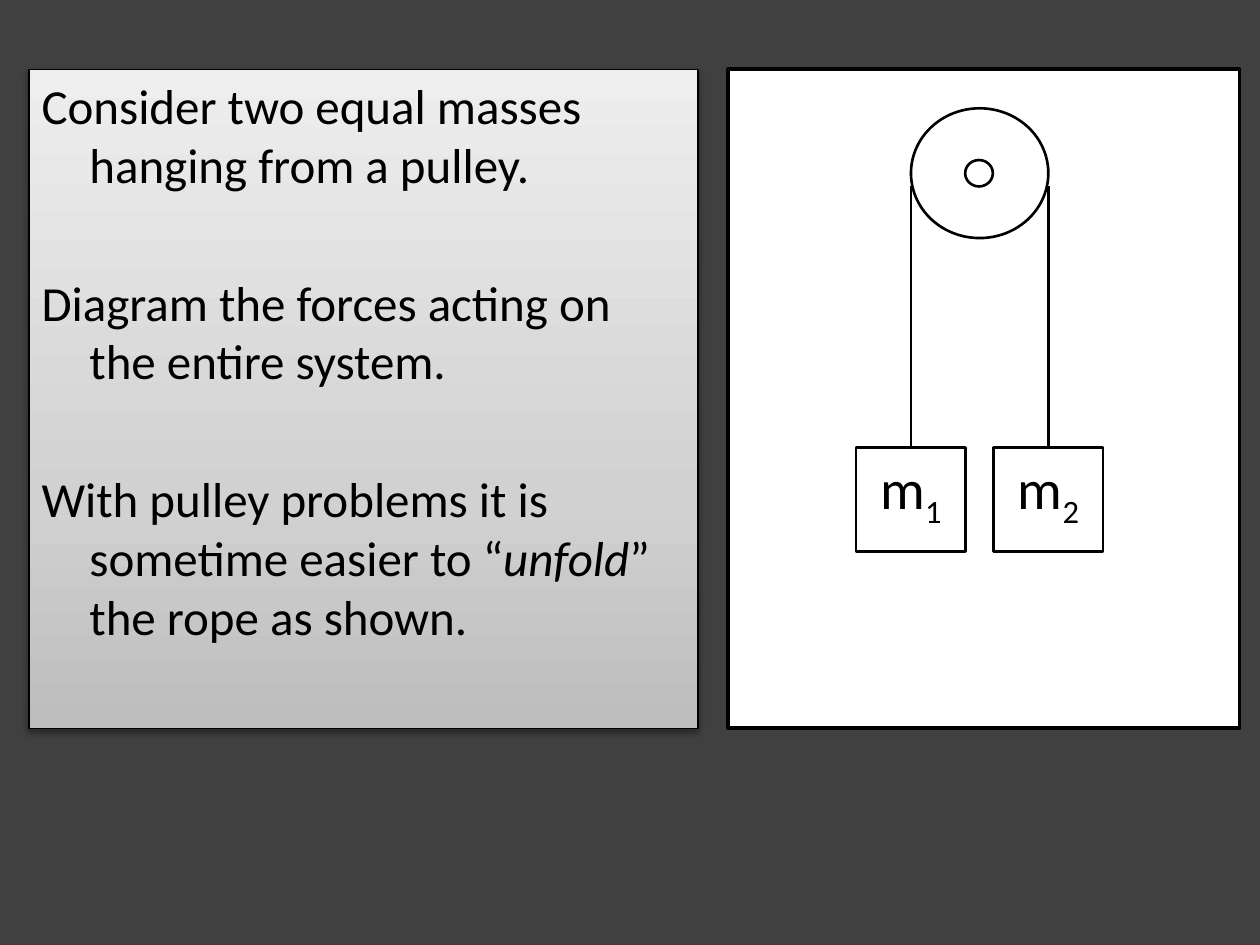
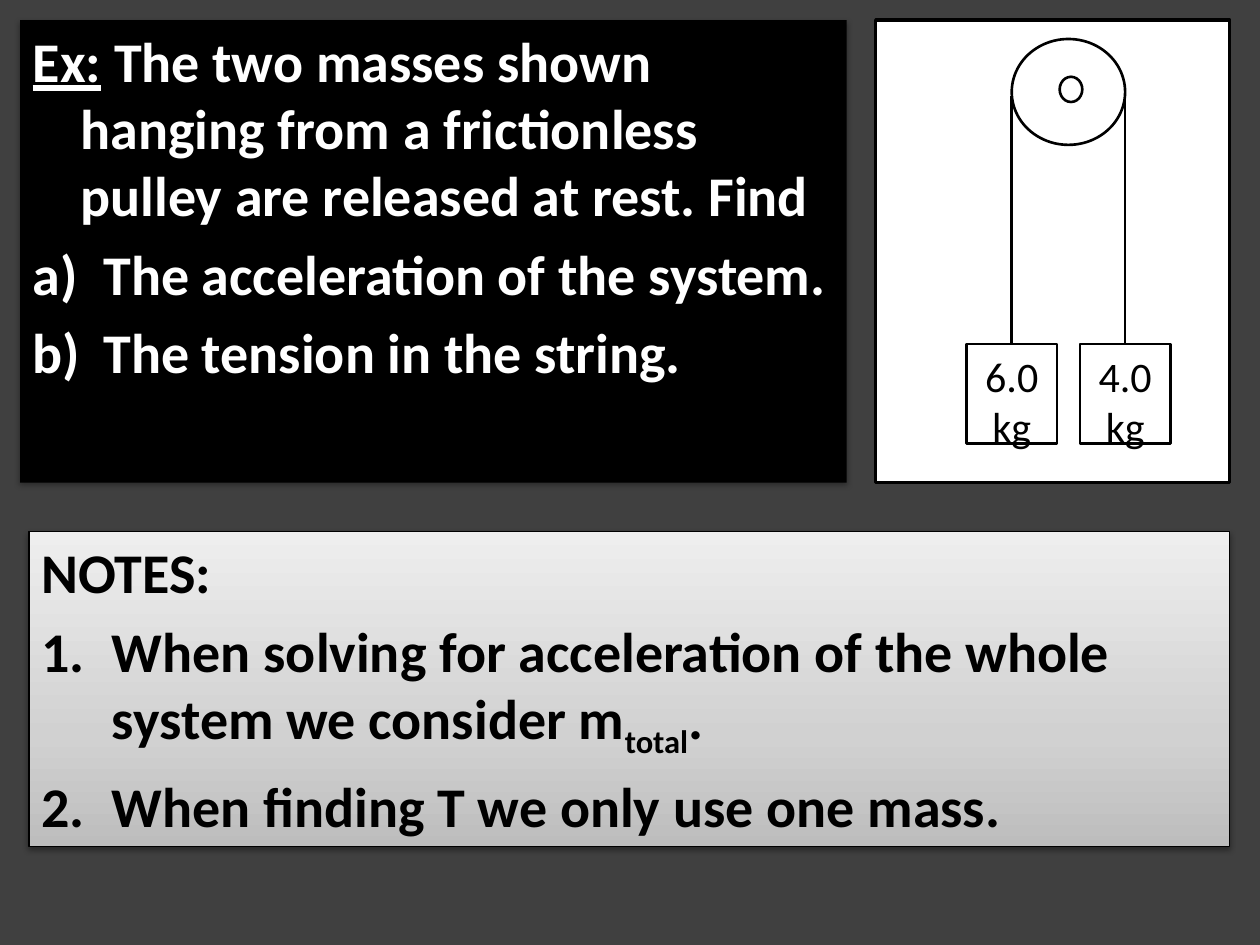
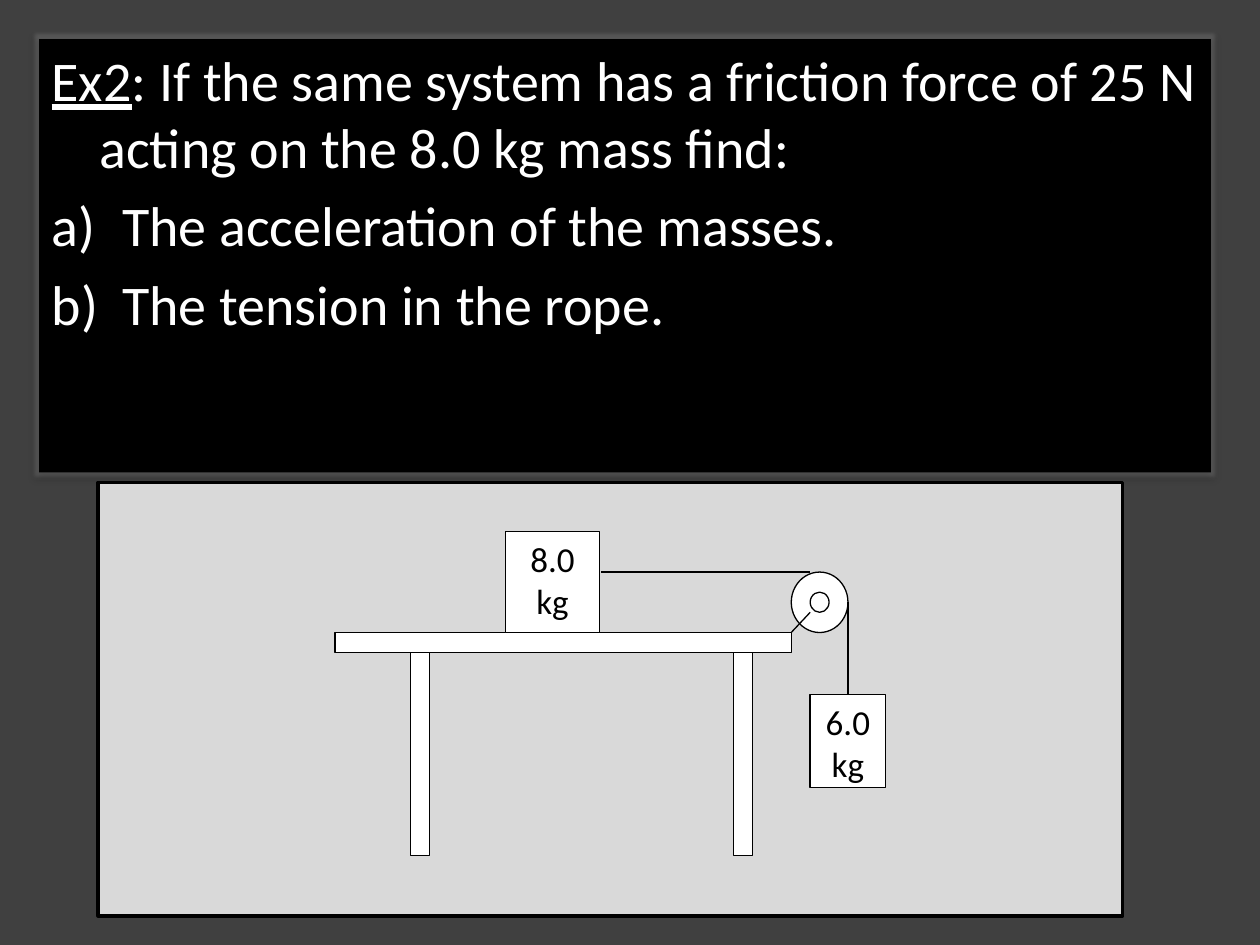
from lxml.etree import SubElement
from pptx import Presentation
from pptx.dml.color import RGBColor
from pptx.enum.shapes import MSO_CONNECTOR, MSO_SHAPE
from pptx.enum.text import MSO_ANCHOR, MSO_AUTO_SIZE, PP_ALIGN
from pptx.oxml.ns import qn
from pptx.util import Inches, Pt

# Shared look
COLORS = {"back": "404040", "black": "000000", "white": "FFFFFF", "panel": "D9D9D9", "glow": "808080"}
SILVER = [(0, "BDBDBD"), (35, "D1D1D1"), (100, "EEEEEE")]
FONT = "Calibri"
RECT, OVAL = MSO_SHAPE.RECTANGLE, MSO_SHAPE.OVAL
LETTERS, NUMBERS = "alphaLcParenR", "arabicPeriod"

# Text: (numbering, [(words, style), ...]) per paragraph
INTRO = [
    (None, [("Consider two equal masses hanging from a pulley.", "")]),
    (None, [("Diagram the forces acting on the entire system.", "")]),
    (None, [("With pulley problems it is sometime easier to “", ""), ("unfold", "i"),
            ("” the rope as shown.", "")]),
]
EXAMPLE_1 = [
    (None, [("Ex:", "bu"),
            (" The two masses shown hanging from a frictionless pulley are released at rest. Find", "b")]),
    (LETTERS, [("The acceleration of the system.", "b")]),
    (LETTERS, [("The tension in the string.", "b")]),
]
NOTES = [
    (None, [("NOTES:", "b")]),
    (NUMBERS, [("When solving for acceleration of the whole system we consider m", "b"),
               ("total", "bs"), (".", "b")]),
    (NUMBERS, [("When finding T we only use one mass.", "b")]),
]
EXAMPLE_2 = [
    (None, [("Ex2", "u"),
            (": If the same system has a friction force of 25 N acting on the 8.0 kg mass find:", "")]),
    (LETTERS, [("The acceleration of the masses.", "")]),
    (LETTERS, [("The tension in the rope.", "")]),
]

# Two masses over a pulley: boxes are left, top, width, height
RIG_1 = dict(wheel=(7.23, 0.86, 1.09, 1.03), hub=(7.66, 1.27, 0.22, 0.21), rope_top=1.48,
             mass_top=3.55, mass_size=(0.87, 0.83), size=32,
             labels=[[("m", ""), ("1", "s")], [("m", ""), ("2", "s")]])
RIG_2 = dict(wheel=(8.03, 0.31, 0.9, 0.84), hub=(8.41, 0.61, 0.18, 0.2), rope_top=0.76,
             mass_top=2.73, mass_size=(0.72, 0.79), size=24,
             labels=[[("6.0 kg", "")], [("4.0 kg", "")]])

# Table with a pulley at its edge
TABLE = (2.66, 5.02, 3.62, 0.16)
LEG_LEFTS, LEG_SIZE = (3.26, 5.82), (0.15, 1.61)
EDGE_WHEEL, EDGE_HUB = (6.28, 4.54, 0.45, 0.48), (6.43, 4.7, 0.15, 0.16)
TABLE_MASSES = [("8.0 kg", (4.01, 4.22, 0.75, 0.8)), ("6.0 kg", (6.43, 5.51, 0.6, 0.74))]


def rgb(name):
    return RGBColor.from_string(COLORS[name])


def add_effect(sp, tag, color, alpha, **attrs):
    effect = SubElement(sp._element.spPr.find(qn("a:effectLst")), qn(tag),
                        {k: str(v) for k, v in attrs.items()})
    clr = SubElement(effect, qn("a:srgbClr"), val=COLORS[color])
    SubElement(clr, qn("a:alpha"), val=str(alpha * 1000))


def style_runs(p, pieces, size, color):
    for words, style in pieces:
        r = p.add_run()
        r.text = words
        f = r.font
        f.name, f.size, f.color.rgb = FONT, Pt(size), rgb(color)
        f.bold, f.italic, f.underline = "b" in style, "i" in style, "u" in style
        if "s" in style:
            r._r.get_or_add_rPr().set("baseline", "-25000")


def add_box(s, kind, box, weight, fill="white"):
    sp = s.shapes.add_shape(kind, *map(Inches, box))
    sp.shadow.inherit = False
    sp.fill.solid()
    sp.fill.fore_color.rgb = rgb(fill)
    sp.line.color.rgb = rgb("black")
    sp.line.width = Pt(weight)
    return sp


def add_line(s, start, end, weight):
    c = s.shapes.add_connector(MSO_CONNECTOR.STRAIGHT, *map(Inches, start + end))
    c.line.color.rgb = rgb("black")
    c.line.width = Pt(weight)
    SubElement(c._element.spPr, qn("a:effectLst"))


def add_mass(s, box, weight, pieces, size):
    tf = add_box(s, RECT, box, weight).text_frame
    tf.word_wrap = True
    tf.vertical_anchor = MSO_ANCHOR.TOP
    p = tf.paragraphs[0]
    p.alignment = PP_ALIGN.CENTER
    p.space_after = Pt(10)
    style_runs(p, pieces, size, "black")


def write_card(sp, box, paragraphs, size, gap, dark=False, glow=False):
    """Fill a text card: black, or silver with a thin outline."""
    sp.left, sp.top, sp.width, sp.height = map(Inches, box)
    if dark:
        sp.fill.solid()
        sp.fill.fore_color.rgb = rgb("black")
        sp.line.fill.background()
    else:
        sp.fill.gradient()
        sp.fill.gradient_angle = 90
        stops = sp._element.spPr.find(".//" + qn("a:gsLst"))
        for old in list(stops):
            stops.remove(old)
        for pos, color in SILVER:
            stop = SubElement(stops, qn("a:gs"), pos=str(pos * 1000))
            SubElement(stop, qn("a:srgbClr"), val=color)
        sp.line.color.rgb = rgb("black")
        sp.line.width = Pt(0.75)
    sp.shadow.inherit = False
    if glow:
        add_effect(sp, "a:glow", "glow", 40, rad=Pt(4))
    add_effect(sp, "a:outerShdw", "black", 35 if dark else 38, blurRad=Pt(3.1),
               dist=Pt(1.7), dir=5400000, algn="ctr", rotWithShape=0)

    tf = sp.text_frame
    tf.word_wrap = True
    tf.auto_size = MSO_AUTO_SIZE.NONE
    tf.vertical_anchor = MSO_ANCHOR.TOP
    for i, (numbering, pieces) in enumerate(paragraphs):
        p = tf.add_paragraph() if i else tf.paragraphs[0]
        p.alignment = PP_ALIGN.LEFT
        p.space_before = Pt(gap if i else 0)
        indent = Inches(0.56 if numbering else 0.38)
        pPr = p._p.get_or_add_pPr()
        pPr.set("marL", str(indent))
        pPr.set("indent", str(-indent))
        if numbering:
            SubElement(pPr, qn("a:buFont"), typeface="+mj-lt")
            SubElement(pPr, qn("a:buAutoNum"), type=numbering)
        else:
            SubElement(pPr, qn("a:buNone"))
        style_runs(p, pieces, size, "white" if dark else "black")


def add_rig(s, wheel, hub, rope_top, mass_top, mass_size, size, labels):
    """Each mass hangs centred below one edge of the wheel."""
    add_box(s, OVAL, wheel, 1.5)
    add_box(s, OVAL, hub, 1.5)
    w, h = mass_size
    for x, pieces in zip((wheel[0], wheel[0] + wheel[2]), labels):
        add_line(s, (x, rope_top), (x, mass_top), 1.5)
        add_mass(s, (x - w / 2, mass_top, w, h), 1.5, pieces, size)


def add_table_scene(s):
    left, top, width, height = TABLE
    add_box(s, RECT, TABLE, 0.75)
    for x in LEG_LEFTS:
        add_box(s, RECT, (x, top + height, *LEG_SIZE), 0.75)
    # Pulley, bracket and ropes
    wx, wy, ww, wh = EDGE_WHEEL
    hx, hy, hw, hh = EDGE_HUB
    add_box(s, OVAL, EDGE_WHEEL, 0.75)
    add_line(s, (left + width, top), (hx, hy + hh), 0.75)
    add_box(s, OVAL, EDGE_HUB, 0.75)
    add_line(s, (wx + ww, wy + wh / 2), (wx + ww, 5.59), 0.75)
    add_line(s, (hx, wy), (4.77, wy), 0.75)
    for label, box in TABLE_MASSES:
        add_mass(s, box, 0.75, [(label, "")], 20)


def new_slide(prs):
    s = prs.slides.add_slide(prs.slide_layouts[1])
    title = s.shapes.title._element
    title.getparent().remove(title)
    return s, s.placeholders[1]


def main():
    prs = Presentation()
    prs.slide_width, prs.slide_height = Inches(10), Inches(7.5)
    back = prs.slide_master.background.fill
    back.solid()
    back.fore_color.rgb = rgb("back")

    # Slide 1: two equal masses
    s, body = new_slide(prs)
    write_card(body, (0.23, 0.55, 5.31, 5.23), INTRO, 28, 45)
    add_box(s, RECT, (5.78, 0.55, 4.06, 5.23), 2)
    add_rig(s, **RIG_1)

    # Slide 2: first example with notes
    s, body = new_slide(prs)
    write_card(body, (0.16, 0.16, 6.56, 3.67), EXAMPLE_1, 32, 6.4, dark=True)
    add_box(s, RECT, (6.95, 0.16, 2.81, 3.67), 2)
    add_rig(s, **RIG_2)
    notes_box = (0.23, 4.22, 9.53, 2.5)
    write_card(add_box(s, RECT, notes_box, 0.75), notes_box, NOTES, 32, 6.4)

    # Slide 3: second example with a table
    s, body = new_slide(prs)
    write_card(body, (0.31, 0.31, 9.3, 3.44), EXAMPLE_2, 32, 6.4, dark=True, glow=True)
    add_box(s, RECT, (0.78, 3.83, 8.13, 3.44), 2, "panel")
    add_table_scene(s)

    prs.save("out.pptx")


if __name__ == "__main__":
    main()
